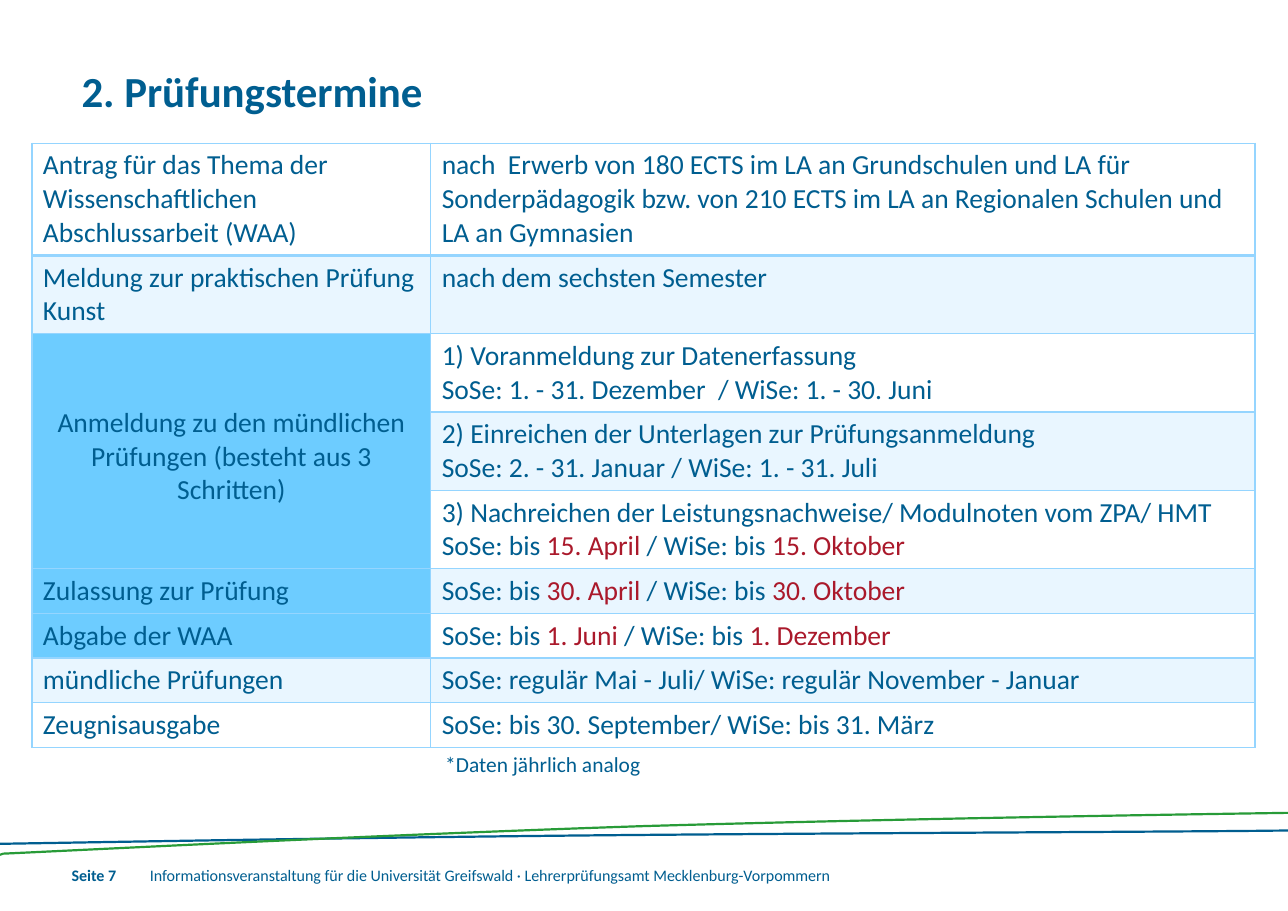
import pptx
import pptx.util
import pptx.dml.color
import pptx.enum.text
import pptx.oxml.ns
import lxml.etree

Inches, Pt = pptx.util.Inches, pptx.util.Pt
RGBColor = pptx.dml.color.RGBColor
ALIGN, ANCHOR = pptx.enum.text.PP_ALIGN, pptx.enum.text.MSO_ANCHOR

BLUE = RGBColor(0x00, 0x5E, 0x90)
GREEN = RGBColor(0x28, 0x9B, 0x38)
RED = RGBColor(0xAA, 0x19, 0x2B)
SKY = RGBColor(0x6D, 0xCC, 0xFF)
PALE = RGBColor(0x95, 0xD5, 0xFF)

HEAD = {"size": Pt(28), "bold": True}
CELL = {"size": Pt(18), "bold": False}
NOTE = {"size": Pt(14), "bold": False}
FOOT = {"size": Pt(10.5), "bold": False}
PAGE = {"size": Pt(10.5), "bold": True}
FRAME = {"margin_left": 0, "margin_top": 0, "margin_right": 0, "margin_bottom": 0,
         "vertical_anchor": ANCHOR.TOP, "auto_size": pptx.enum.text.MSO_AUTO_SIZE.NONE}

# Each row: left text, its fill, right text, its fill; dates between bars are red
ROWS = [
    ("Antrag für das Thema der Wissenschaftlichen Abschlussarbeit (WAA)", None,
     "nach  Erwerb von 180 ECTS im LA an Grundschulen und LA für Sonderpädagogik "
     "bzw. von 210 ECTS im LA an Regionalen Schulen und LA an Gymnasien", None),
    ("Meldung zur praktischen Prüfung Kunst", PALE, "nach dem sechsten Semester", PALE),
    ("Anmeldung zu den mündlichen Prüfungen (besteht aus 3 Schritten)", SKY,
     "1) Voranmeldung zur Datenerfassung \n"
     "SoSe: 1. - 31. Dezember  / WiSe: 1. - 30. Juni", None),
    (None, SKY, "2) Einreichen der Unterlagen zur Prüfungsanmeldung \n"
     "SoSe: 2. - 31. Januar / WiSe: 1. - 31. Juli", PALE),
    (None, SKY, "3) Nachreichen der Leistungsnachweise/ Modulnoten vom ZPA/ HMT\n"
     "SoSe: bis |15. April |/ WiSe: bis |15. Oktober", None),
    ("Zulassung zur Prüfung", SKY,
     "SoSe: bis |30. April |/ WiSe: bis |30. Oktober", PALE),
    ("Abgabe der WAA", SKY, "SoSe: bis |1. Juni |/ WiSe: bis |1. Dezember", None),
    ("mündliche Prüfungen", PALE,
     "SoSe: regulär Mai - Juli/ WiSe: regulär November - Januar", PALE),
    ("Zeugnisausgabe", None, "SoSe: bis 30. September/ WiSe: bis 31. März", None),
]
HEIGHTS = [1.02] + [0.71] * 4 + [0.4] * 4

# Wave edges: shared x positions, one list of heights per band
WAVE_X = [0, 0.03, 0.7, 3.41, 5.84, 8.25, 10.99, 11.66, 11.69]
WAVES = [
    (BLUE, [7.65, 7.65, 7.64, 7.59, 7.57, 7.55, 7.54, 7.53, 7.53]),
    (GREEN, [7.75, 7.74, 7.71, 7.57, 7.49, 7.42, 7.38, 7.37, 7.37]),
]
BENDS = (1, 4, 10, 13)  # first of the three segments that make each curve


def apply(target, values):
    for name, value in values.items():
        setattr(target, name, value)


def add_node(parent, tag, **attrs):
    return lxml.etree.SubElement(parent, pptx.oxml.ns.qn(tag), attrs)


def write(para, text, style):
    for part, piece in enumerate(text.split("|")):
        for row, line in enumerate(piece.split("\n")):
            if row:
                para.add_line_break()
            run = para.add_run()
            run.text = line
            apply(run.font, {"name": "Calibri", **style})
            run.font.color.rgb = RED if part % 2 else BLUE


def fill_box(shape, box, text, style, wrap=True):
    apply(shape, dict(zip(("left", "top", "width", "height"), map(Inches, box))))
    apply(shape.text_frame, {**FRAME, "word_wrap": wrap})
    para = shape.text_frame.paragraphs[0]
    para.alignment = ALIGN.LEFT
    write(para, text, style)
    return para


def add_label(slide, box, text, style, wrap):
    shape = slide.shapes.add_textbox(0, 0, 0, 0)
    fill_box(shape, box, text, style, wrap)


def bend(shape):
    """Turn groups of three straight segments into cubic curves."""
    lines = list(shape._element.iter(pptx.oxml.ns.qn("a:lnTo")))
    for first in BENDS:
        curve = lines[first]
        for line in lines[first + 1:first + 3]:
            curve.append(line[0])
            line.getparent().remove(line)
        curve.tag = pptx.oxml.ns.qn("a:cubicBezTo")


def add_wave(slide, color, heights):
    upper = list(zip(WAVE_X, heights))
    lower = [(x, y + 0.02) for x, y in reversed(upper)]
    dots = [(Inches(x), Inches(y)) for x, y in upper + lower]
    form = slide.shapes.build_freeform(*dots[0])
    form.add_line_segments(dots[1:], close=True)
    band = form.convert_to_shape()
    bend(band)
    band.shadow.inherit = False
    band.fill.solid()
    band.fill.fore_color.rgb = color
    band.line.fill.background()


def set_edge(cell, side, width):
    edge = add_node(cell._tc.get_or_add_tcPr(), "a:ln" + side, w=str(Pt(width)))
    add_node(add_node(edge, "a:solidFill"), "a:srgbClr", val=str(PALE))


def style_cell(cell, color, base):
    for side in "LRTB":
        set_edge(cell, side, base if side == "B" else 1)
    if color is None:
        cell.fill.background()
        return
    cell.fill.solid()
    cell.fill.fore_color.rgb = color
    if color == PALE:
        paint = cell._tc.tcPr.find(pptx.oxml.ns.qn("a:solidFill"))
        add_node(paint[0], "a:alpha", val="20000")


def add_dates(slide):
    box = map(Inches, (0.29, 1.3, 11.1, sum(HEIGHTS)))
    table = slide.shapes.add_table(len(ROWS), 2, *box).table
    apply(table, {"first_row": False, "horz_banding": False})
    for col, width in zip(table.columns, (3.62, 7.48)):
        col.width = Inches(width)
    for at, (left, shade, right, tint) in enumerate(ROWS):
        table.rows[at].height = Inches(HEIGHTS[at])
        for col, (text, color) in enumerate(((left, shade), (right, tint))):
            cell = table.cell(at, col)
            style_cell(cell, color, 1 if at else 2)
            if text:
                write(cell.text_frame.paragraphs[0], text, CELL)
    # One label spans the three steps of the registration
    steps = table.cell(2, 0)
    steps.merge(table.cell(4, 0))
    steps.margin_top = Inches(0.66)
    steps.text_frame.paragraphs[0].alignment = ALIGN.CENTER


def main():
    deck = pptx.Presentation()
    apply(deck, {"slide_width": Inches(11.69), "slide_height": Inches(8.27)})
    slide = deck.slides.add_slide(deck.slide_layouts[1])

    # Footer band
    for color, heights in WAVES:
        add_wave(slide, color, heights)
    add_label(slide, (0.65, 7.86, 0.71, 0.25), "Seite 7", PAGE, False)
    add_label(slide, (1.36, 7.86, 8.62, 0.25),
              "Informationsveranstaltung für die Universität Greifswald · "
              "Lehrerprüfungsamt Mecklenburg-Vorpommern", FOOT, True)

    # Title and note
    title, body = slide.shapes.title, slide.placeholders[1]
    fill_box(title, (0.65, 0.59, 8.66, 1.06), "2. Prüfungstermine", HEAD)
    title.text_frame.margin_left = Inches(0.09)
    note = fill_box(body, (4.04, 6.82, 7.35, 0.31), "*Daten jährlich analog", NOTE)
    props = note._p.get_or_add_pPr()
    note.space_before = Pt(0)
    add_node(props, "a:buNone")
    for name in ("marL", "indent"):
        props.set(name, "0")

    # Table of dates
    add_dates(slide)
    deck.save("out.pptx")


if __name__ == "__main__":
    main()
